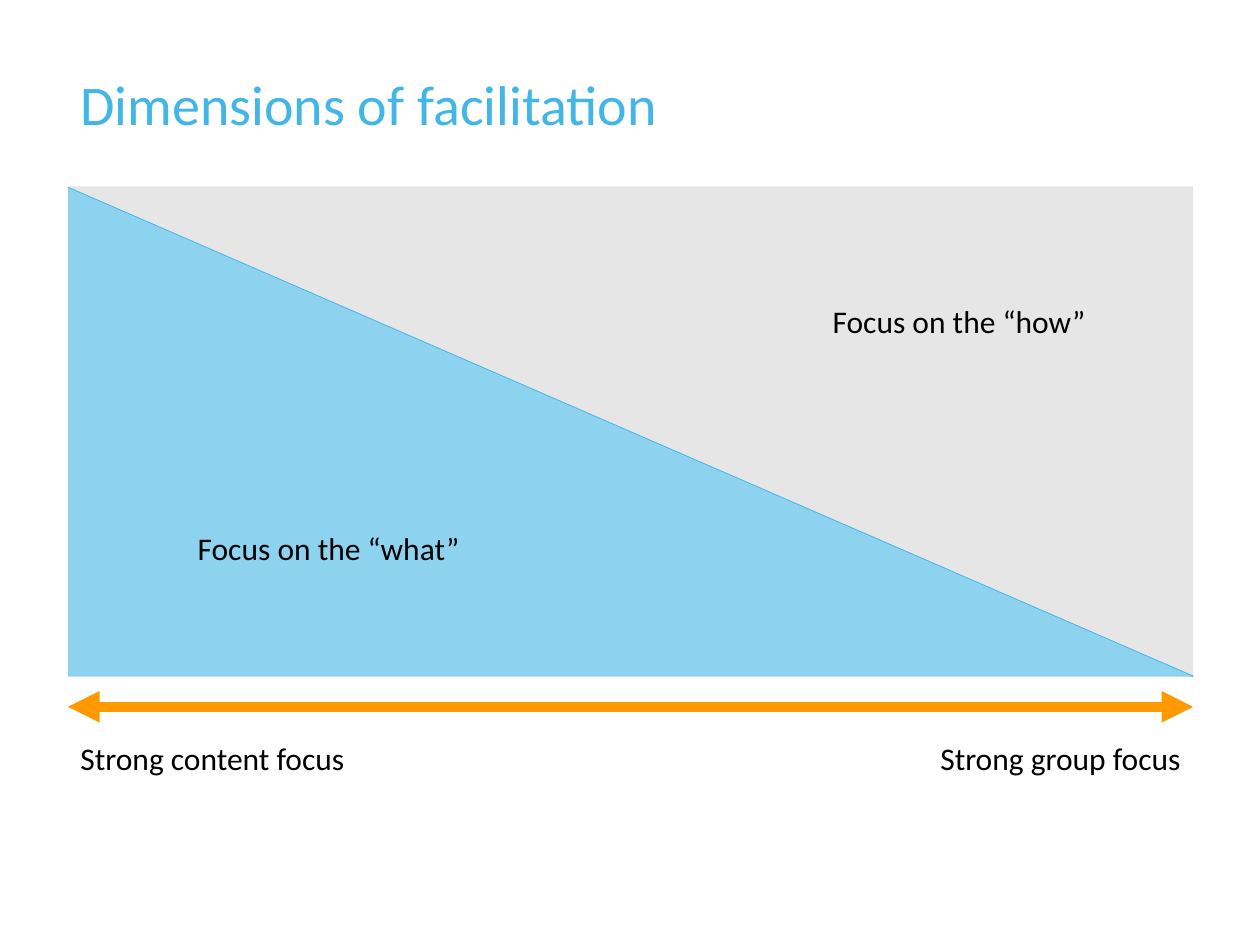
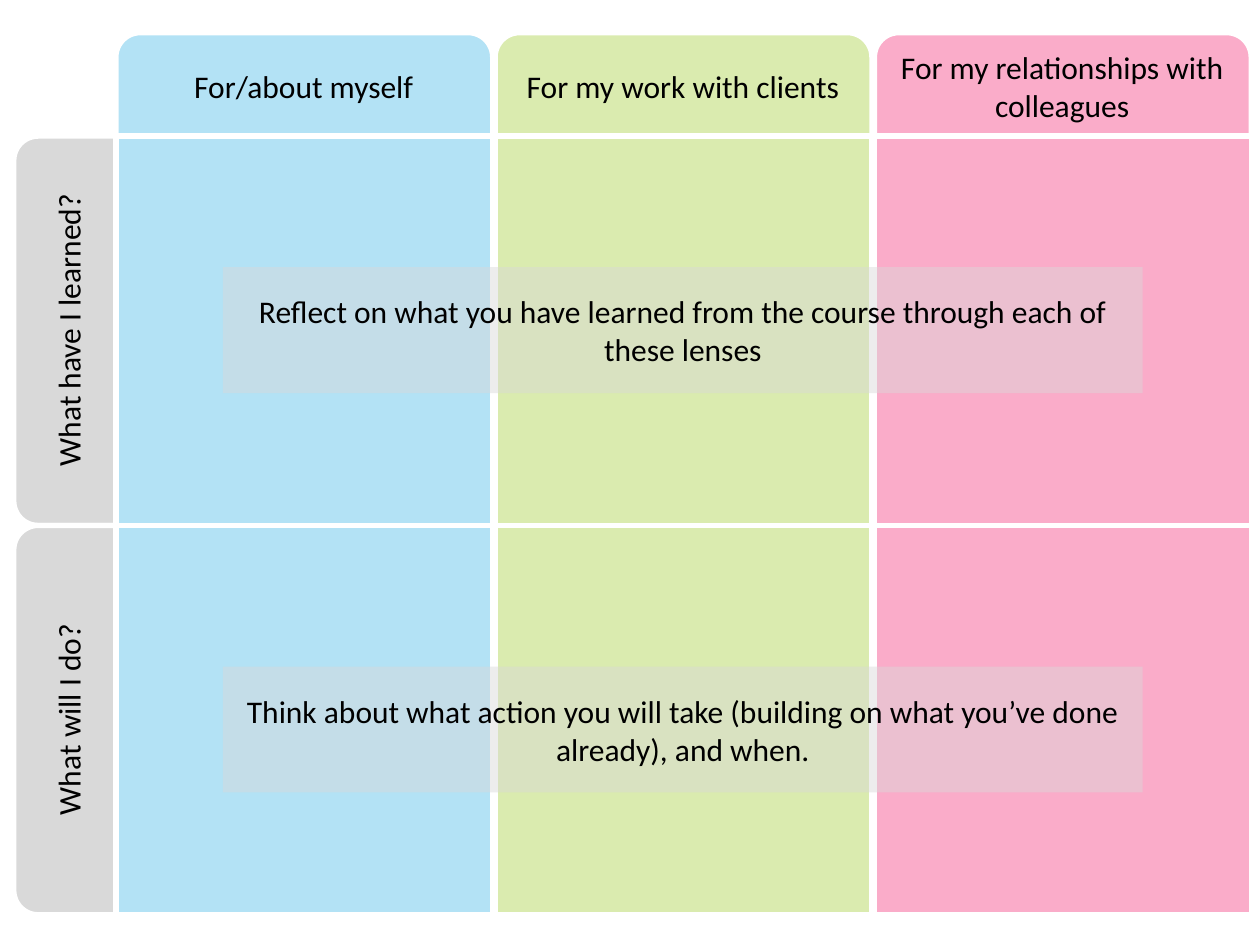
from lxml import etree
from pptx import Presentation
from pptx.dml.color import RGBColor
from pptx.enum.shapes import MSO_CONNECTOR, MSO_SHAPE
from pptx.enum.text import MSO_ANCHOR, PP_ALIGN
from pptx.oxml.ns import qn
from pptx.util import Inches, Pt

COLORS = {
    "title": "42B6E6", "text": "000000", "white": "FFFFFF",
    "how": "E7E6E6", "what": "8DD3F0", "diagonal": "41B6E6", "arrow": "FF9900",
    "label": "D9D9D9", "blue": "B3E2F5", "green": "DAEBAF", "pink": "FAACC9",
}
TITLE = {"size": Pt(32), "name": "Calibri"}
BODY = {"size": Pt(18), "name": "Calibri"}


def rgb(key):
    return RGBColor.from_string(COLORS[key])


def write(sp, text, align=PP_ALIGN.LEFT, anchor=MSO_ANCHOR.TOP, font=BODY,
          color="text", wrap=True):
    tf = sp.text_frame
    tf.word_wrap, tf.vertical_anchor = wrap, anchor
    p = tf.paragraphs[0]
    p.alignment = align
    r = p.add_run()
    r.text = text
    for name, value in font.items():
        setattr(r.font, name, value)
    r.font.color.rgb = rgb(color)
    return p


def add_text(s, box, text, **options):
    sp = s.shapes.add_textbox(*map(Inches, box))
    return sp, write(sp, text, **options)


def add_block(s, kind, box, fill, border=None, alpha=None):
    sp = s.shapes.add_shape(kind, *map(Inches, box))
    sp.shadow.inherit = False
    sp.fill.solid()
    sp.fill.fore_color.rgb = rgb(fill)
    if border:
        sp.line.color.rgb, sp.line.width = rgb("white"), Pt(border)
    else:
        sp.line.fill.background()
    if alpha:
        color = sp.fill._xPr.find(".//" + qn("a:srgbClr"))
        etree.SubElement(color, qn("a:alpha"), val=str(alpha * 1000))
    return sp


def add_line(s, start, end, color, width, arrows=False):
    line = s.shapes.add_connector(MSO_CONNECTOR.STRAIGHT, *map(Inches, start + end))
    line.line.color.rgb, line.line.width = rgb(color), Pt(width)
    if arrows:
        ln = line.line._get_or_add_ln()
        for tag in ("a:headEnd", "a:tailEnd"):
            etree.SubElement(ln, qn(tag), type="triangle")
    etree.SubElement(line._element.spPr, qn("a:effectLst"))


def turned(x, y, w, h):
    """Box that covers x, y, w, h once it is rotated by 270 degrees."""
    return x + (w - h) / 2, y + (h - w) / 2, h, w


def add_focus_chart(s, x, y, w, h):
    # Two triangles split by the diagonal
    add_block(s, MSO_SHAPE.RECTANGLE, (x, y, w, h), "how")
    add_line(s, (x, y + 0.01), (x + w, y + h + 0.01), "diagonal", 1)
    what = add_block(s, MSO_SHAPE.ISOSCELES_TRIANGLE, (x, y + 0.01, w, h), "what")
    what.adjustments[0] = 0
    add_text(s, (x + 0.93, y + 2.67, 2.29, 0.4), "Focus on the “what”", wrap=False)
    add_text(s, (x + 5.97, y + 0.87, 2.23, 0.4), "Focus on the “how”", wrap=False)

    # Scale below the chart
    bottom = y + h
    add_text(s, (x, bottom + 0.46, 2.32, 0.4), "Strong content focus")
    add_text(s, (x + w - 2.13, bottom + 0.46, 2.13, 0.4), "Strong group focus",
             align=PP_ALIGN.RIGHT)
    add_line(s, (x, bottom + 0.25), (x + w, bottom + 0.25), "arrow", 6, arrows=True)


def add_reflection_grid(s, x, y):
    col_w, col_step, row_h, tab = 2.99, 3.01, 3.09, 1.16
    middle = {"align": PP_ALIGN.CENTER, "anchor": MSO_ANCHOR.MIDDLE}
    columns = [("For/about myself", "blue"),
               ("For my work with clients", "green"),
               ("For my relationships with colleagues", "pink")]
    # Row label, prompt, prompt offset from the row top
    rows = [("What have I learned?",
             "Reflect on what you have learned from the course through each of "
             "these lenses", 1.04),
            ("What will I do?",
             "Think about what action you will take (building on what you’ve done "
             "already), and when.", 1.12)]
    lefts = [x + i * col_step for i in range(len(columns))]
    tops = [y + i * row_h for i in range(len(rows))]

    # Rounded tabs, partly covered by the cells
    for top in tops:
        sp = add_block(s, MSO_SHAPE.ROUNDED_RECTANGLE,
                       turned(x - 0.81, top, tab, row_h), "label", 3)
        sp.rotation = 270
    for left, (_, color) in zip(lefts, columns):
        add_block(s, MSO_SHAPE.ROUNDED_RECTANGLE, (left, y - 0.82, col_w, tab), color, 3)

    # Cells
    for top in tops:
        for left, (_, color) in zip(lefts, columns):
            add_block(s, MSO_SHAPE.RECTANGLE, (left, top, col_w, row_h), color, 3)

    # Column and row labels
    for left, (name, _) in zip(lefts, columns):
        add_text(s, (left, y - 0.79, 2.98, 0.78), name, **middle)
    for top, (name, _, _) in zip(tops, rows):
        sp, _ = add_text(s, turned(x - 0.82, top + 0.05, 0.88, 2.98), name, **middle)
        sp.rotation = 270

    # Prompts across the columns
    for top, (_, prompt, offset) in zip(tops, rows):
        sp = add_block(s, MSO_SHAPE.RECTANGLE, (x + 0.85, top + offset, 7.3, 1),
                       "label", alpha=45)
        write(sp, prompt, **middle)


def main():
    prs = Presentation()
    prs.slide_width, prs.slide_height = Inches(10), Inches(7.5)
    blank = prs.slide_layouts[6]

    s = prs.slides.add_slide(blank)
    _, p = add_text(s, (0.54, 0.56, 9.06, 1.03), "Dimensions of facilitation",
                    font=TITLE, color="title")
    p.line_spacing = 0.9
    add_focus_chart(s, 0.54, 1.48, 8.93, 3.88)

    s = prs.slides.add_slide(blank)
    add_reflection_grid(s, 0.92, 1.08)

    prs.save("out.pptx")


if __name__ == "__main__":
    main()
